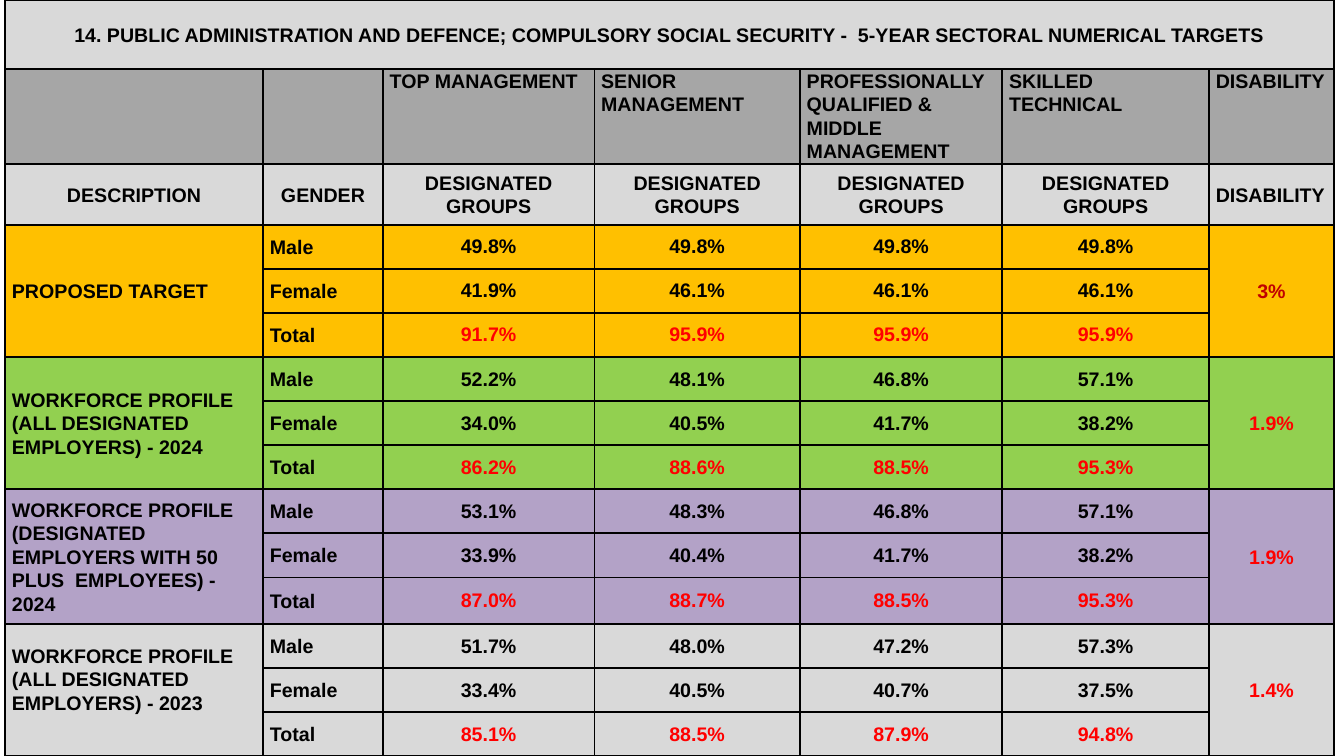
from dataclasses import dataclass
from pptx import Presentation
from pptx import util as u
from pptx.dml.color import RGBColor
from pptx.enum import text
from pptx.oxml import parse_xml
from pptx.oxml.ns import nsdecls


@dataclass
class Theme:
    font: str = "Arial"
    size: int = 14
    border_width: float = 1.5
    black: str = "000000"
    red: str = "FF0000"
    dark_red: str = "C00000"
    light_grey: str = "D9D9D9"
    grey: str = "A6A6A6"
    amber: str = "FFC000"
    green: str = "92D050"
    purple: str = "B3A2C7"


theme = Theme()
LEFT, CENTER = text.PP_ALIGN.LEFT, text.PP_ALIGN.CENTER
TOP, MIDDLE = text.MSO_ANCHOR.TOP, text.MSO_ANCHOR.MIDDLE


def write_cell(cell, wording, align=LEFT, color=theme.black, anchor=MIDDLE, spacing=1.07):
    cell.vertical_anchor = anchor
    cell.text_frame.text = wording
    paragraph = cell.text_frame.paragraphs[0]
    paragraph.alignment = align
    paragraph.line_spacing = spacing
    font = paragraph.runs[0].font
    font.name = theme.font
    font.size = u.Pt(theme.size)
    font.bold = True
    font.color.rgb = RGBColor.from_string(color)


def style_cell(cell, fill):
    cell.margin_left = cell.margin_right = u.Cm(0.17)
    cell.margin_top = cell.margin_bottom = 0
    cell.fill.solid()
    cell.fill.fore_color.rgb = RGBColor.from_string(fill)
    properties = cell._tc.get_or_add_tcPr()
    for position, side in enumerate(("lnL", "lnR", "lnT", "lnB")):
        properties.insert(position, parse_xml(
            f'<a:{side} {nsdecls("a")} w="{u.Pt(theme.border_width)}"><a:solidFill>'
            f'<a:srgbClr val="{theme.black}"/></a:solidFill></a:{side}>'))


TITLE = "14. PUBLIC ADMINISTRATION AND DEFENCE; COMPULSORY SOCIAL SECURITY -  5-YEAR SECTORAL NUMERICAL TARGETS"
LEVELS = ["TOP MANAGEMENT", "SENIOR MANAGEMENT", "PROFESSIONALLY QUALIFIED & MIDDLE MANAGEMENT",
          "SKILLED TECHNICAL", "DISABILITY"]
HEADINGS = ["DESCRIPTION", "GENDER"] + ["DESIGNATED GROUPS"] * 4 + ["DISABILITY"]
GENDERS = ["Male", "Female", "Total"]
GROUPS = [
    ("PROPOSED TARGET", theme.amber, "3%", theme.dark_red,
     [[49.8, 49.8, 49.8, 49.8], [41.9, 46.1, 46.1, 46.1], [91.7, 95.9, 95.9, 95.9]]),
    ("WORKFORCE PROFILE (ALL DESIGNATED EMPLOYERS) - 2024", theme.green, "1.9%", theme.red,
     [[52.2, 48.1, 46.8, 57.1], [34.0, 40.5, 41.7, 38.2], [86.2, 88.6, 88.5, 95.3]]),
    ("WORKFORCE PROFILE (DESIGNATED EMPLOYERS WITH 50 PLUS  EMPLOYEES) - 2024", theme.purple, "1.9%", theme.red,
     [[53.1, 48.3, 46.8, 57.1], [33.9, 40.4, 41.7, 38.2], [87.0, 88.7, 88.5, 95.3]]),
    ("WORKFORCE PROFILE (ALL DESIGNATED EMPLOYERS) - 2023", theme.light_grey, "1.4%", theme.red,
     [[51.7, 48.0, 47.2, 57.3], [33.4, 40.5, 40.7, 37.5], [85.1, 88.5, 87.9, 94.8]]),
]
COLUMN_WIDTHS = [6.5, 3.02, 5.33, 5.18, 5.1, 5.21, 3.15]
ROW_HEIGHTS = [1.74, 2.39, 1.54] + [1.11] * 8 + [1.18] + [1.11] * 3

presentation = Presentation()
presentation.slide_width, presentation.slide_height = u.Cm(33.87), u.Cm(19.05)
slide = presentation.slides.add_slide(presentation.slide_layouts[6])
table = slide.shapes.add_table(len(ROW_HEIGHTS), len(COLUMN_WIDTHS), u.Cm(0.13), 0,
                               u.Cm(sum(COLUMN_WIDTHS)), u.Cm(sum(ROW_HEIGHTS))).table
for column, width in zip(table.columns, COLUMN_WIDTHS):
    column.width = u.Cm(width)
for row, height in zip(table.rows, ROW_HEIGHTS):
    row.height = u.Cm(height)

row_fills = [theme.light_grey, theme.grey, theme.light_grey]
row_fills += [group[1] for group in GROUPS for gender in GENDERS]
for row, fill in zip(table.rows, row_fills):
    for cell in row.cells:
        style_cell(cell, fill)

table.cell(0, 0).merge(table.cell(0, 6))
write_cell(table.cell(0, 0), TITLE, CENTER)
for column, level in enumerate(LEVELS, 2):
    write_cell(table.cell(1, column), level, anchor=TOP)
for column, heading in enumerate(HEADINGS):
    write_cell(table.cell(2, column), heading, LEFT if column == 6 else CENTER)

for index, (description, fill, disability, disability_color, shares) in enumerate(GROUPS):
    first = 3 + index * len(GENDERS)
    for column in (0, 6):
        table.cell(first, column).merge(table.cell(first + 2, column))
    write_cell(table.cell(first, 0), description)
    write_cell(table.cell(first, 6), disability, CENTER, disability_color)
    for row, (gender, values) in enumerate(zip(GENDERS, shares), first):
        write_cell(table.cell(row, 1), gender)
        color = theme.red if gender == "Total" else theme.black
        for column, value in enumerate(values, 2):
            write_cell(table.cell(row, column), f"{value:.1f}%", CENTER, color, spacing=1.0)

table.cell(12, 0).margin_bottom = u.Cm(0.56)
presentation.save("out.pptx")
